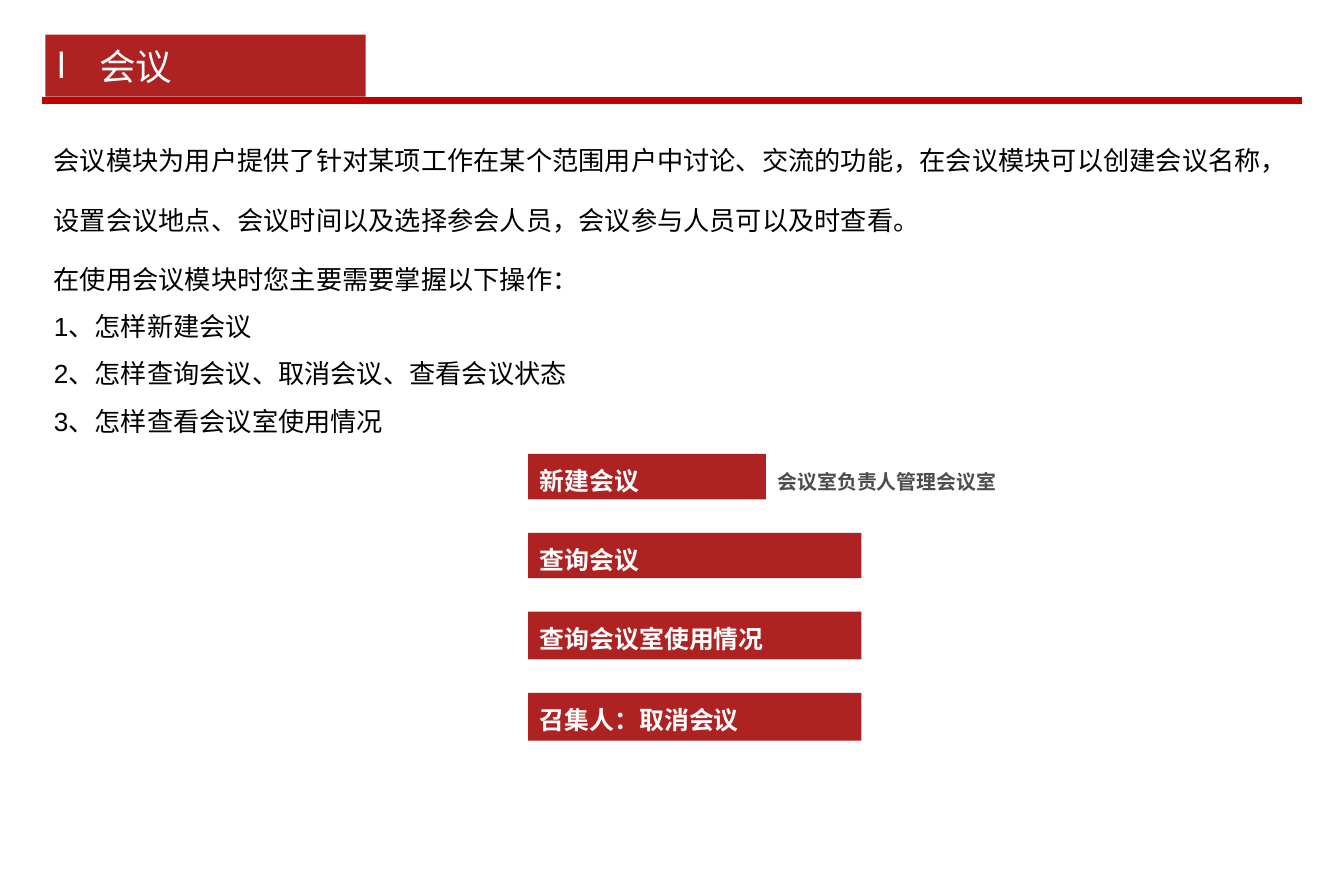
from dataclasses import dataclass
from lxml import etree
from pptx import Presentation
from pptx import util as u
from pptx.dml.color import RGBColor
from pptx.enum import shapes, text
from pptx.oxml.ns import qn

TITLE = "会议"
INTRO = [
    "会议模块为用户提供了针对某项工作在某个范围用户中讨论、交流的功能，在会议模块可以创建会议名称，",
    "设置会议地点、会议时间以及选择参会人员，会议参与人员可以及时查看。",
    "在使用会议模块时您主要需要掌握以下操作：",
]
STEPS = ["1、怎样新建会议", "2、怎样查询会议、取消会议、查看会议状态", "3、怎样查看会议室使用情况"]
BARS = [
    ("新建会议", 199, 38),
    ("查询会议", 279, 38),
    ("查询会议室使用情况", 279, 40),
    ("召集人：取消会议", 279, 40),
]
NOTE = "会议室负责人管理会议室"
LEFT, TOP, GAP = 442, 380, 28


@dataclass(frozen=True)
class Theme:
    face: str = "Arial"
    bar: str = "AE2222"
    rule: str = "C00000"
    ink: str = "000000"
    note: str = "4D4D4D"
    white: str = "FFFFFF"
    head_pt: float = 22
    body_pt: float = 15.8
    bar_pt: float = 15
    note_pt: float = 12


THEME = Theme()


def px(n):
    return u.Emu(n * 9144)


def place(shape, *box):
    shape.left, shape.top, shape.width, shape.height = map(px, box)


def paint(shape):
    shape.fill.solid()
    shape.fill.fore_color.rgb = RGBColor.from_string(THEME.bar)
    shape.line.fill.background()


def style(para, size, color, bold=False, space=1.0, align=text.PP_ALIGN.LEFT):
    para.alignment = align
    para.line_spacing = space
    para.space_before = u.Pt(0)
    for run in para.runs:
        font = run.font
        font.name, font.size, font.bold = THEME.face, u.Pt(size), bold
        font.color.rgb = RGBColor.from_string(color)


def bullet(para, mark=None, indent=0):
    props = para._p.get_or_add_pPr()
    props.set("marL", str(px(indent)))
    props.set("indent", str(-px(indent)))
    if mark:
        etree.SubElement(props, qn("a:buFont")).set("typeface", THEME.face)
        etree.SubElement(props, qn("a:buChar")).set("char", mark)
    else:
        etree.SubElement(props, qn("a:buNone"))


def frame(shape, anchor=text.MSO_ANCHOR.TOP, wrap=True):
    area = shape.text_frame
    area.auto_size = text.MSO_AUTO_SIZE.NONE
    area.vertical_anchor = anchor
    area.word_wrap = wrap
    return area


def add_rule(slide):
    rule = slide.shapes.add_connector(
        shapes.MSO_CONNECTOR.STRAIGHT, px(35), px(84), px(1090), px(84))
    rule.line.color.rgb = RGBColor.from_string(THEME.rule)
    rule.line.width = u.Pt(4.5)
    etree.SubElement(rule._element.spPr, qn("a:effectLst"))


def add_title(slide):
    title = slide.shapes.title
    place(title, 38, 29, 268, 52)
    paint(title)
    area = frame(title, text.MSO_ANCHOR.MIDDLE)
    area.text = TITLE
    para = area.paragraphs[0]
    bullet(para, "l", 35)
    style(para, THEME.head_pt, THEME.white)


def add_body(slide):
    body = slide.placeholders[1]
    place(body, 35, 92, 1055, 280)
    area = frame(body)
    area.text = "\n".join(INTRO + STEPS)
    for i, para in enumerate(area.paragraphs):
        bullet(para)
        style(para, THEME.body_pt, THEME.ink, space=1.9 if i < len(INTRO) else 1.5)


def add_bars(slide):
    top = TOP
    for label, width, height in BARS:
        bar = slide.shapes.add_shape(
            shapes.MSO_SHAPE.RECTANGLE, *map(px, (LEFT, top, width, height)))
        bar.shadow.inherit = False
        paint(bar)
        area = frame(bar)
        area.text = label
        style(area.paragraphs[0], THEME.bar_pt, THEME.white, True, 1.2,
              text.PP_ALIGN.JUSTIFY)
        top += height + GAP


def add_note(slide):
    note = slide.shapes.add_textbox(*map(px, (LEFT + BARS[0][1], 388, 205, 30)))
    area = frame(note, wrap=False)
    area.text = NOTE
    style(area.paragraphs[0], THEME.note_pt, THEME.note, True)


def main():
    deck = Presentation()
    deck.slide_width, deck.slide_height = px(1125), px(750)
    slide = deck.slides.add_slide(deck.slide_layouts[1])
    for build in (add_rule, add_title, add_body, add_bars, add_note):
        build(slide)
    deck.save("out.pptx")


if __name__ == "__main__":
    main()
